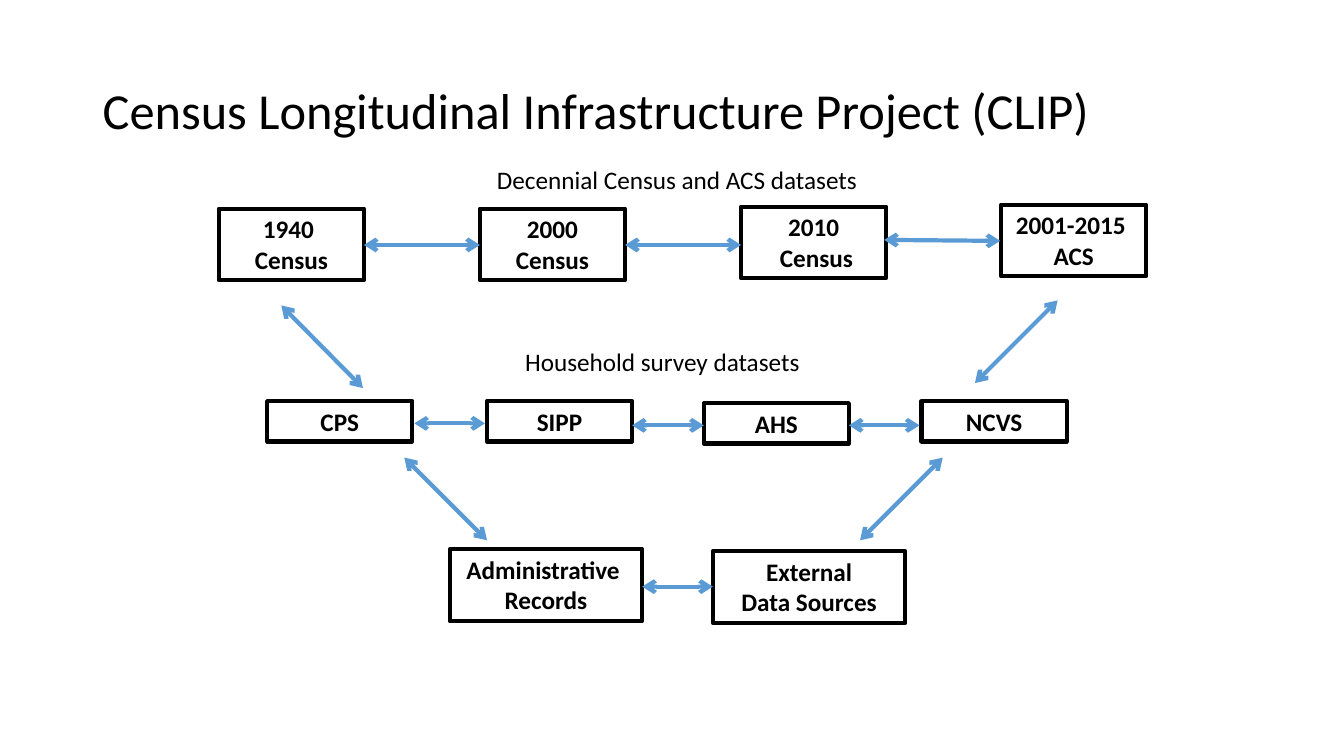
"""Build the Census Longitudinal Infrastructure Project slide."""
from dataclasses import dataclass

from lxml import etree
from pptx import Presentation
from pptx.dml.color import RGBColor
from pptx.enum.shapes import MSO_CONNECTOR, MSO_SHAPE
from pptx.enum.text import MSO_ANCHOR, PP_ALIGN
from pptx.oxml.ns import qn
from pptx.util import Inches, Pt

RECTANGLE = MSO_SHAPE.RECTANGLE
STRAIGHT = MSO_CONNECTOR.STRAIGHT
MIDDLE, TOP = MSO_ANCHOR.MIDDLE, MSO_ANCHOR.TOP
LEFT, CENTER = PP_ALIGN.LEFT, PP_ALIGN.CENTER
BLACK, WHITE, BLUE = "000000", "FFFFFF", "5B9BD5"
FONT = "Calibri"
LINE_WIDTH = Pt(3)


@dataclass(frozen=True)
class Dataset:
    label: str
    left: float
    top: float


@dataclass(frozen=True)
class Tier:
    width: float
    height: float
    datasets: tuple[Dataset, ...]


@dataclass(frozen=True)
class Caption:
    text: str
    left: float
    top: float
    width: float


@dataclass(frozen=True)
class Link:
    x1: float
    y1: float
    x2: float
    y2: float


TIERS = (
    Tier(1.44, 0.71, (
        Dataset("1940 \nCensus", 2.17, 2.07),
        Dataset("2000\nCensus", 4.76, 2.07),
        Dataset("2010\n Census", 7.35, 2.05),
        Dataset("2001-2015 \nACS", 9.93, 2.03),
    )),
    Tier(1.44, 0.4, (
        Dataset("CPS", 2.65, 3.98),
        Dataset("SIPP", 4.83, 3.98),
        Dataset("AHS", 6.98, 4),
        Dataset("NCVS", 9.14, 3.98),
    )),
    Tier(1.91, 0.71, (
        Dataset("Administrative \nRecords", 4.46, 5.45),
        Dataset("External\nData Sources", 7.07, 5.47),
    )),
)
CAPTIONS = (
    Caption("Decennial Census and ACS datasets", 4.83, 1.58, 3.82),
    Caption("Household survey datasets", 5.11, 3.39, 2.95),
)
LINKS = (
    Link(3.61, 2.43, 4.76, 2.43),
    Link(6.2, 2.43, 7.35, 2.43),
    Link(8.77, 2.38, 9.92, 2.39),
    Link(4.11, 4.2, 4.81, 4.2),
    Link(6.27, 4.22, 6.98, 4.22),
    Link(8.42, 4.22, 9.12, 4.22),
    Link(6.37, 5.82, 7.07, 5.82),
    Link(2.79, 3.03, 3.6, 3.85),
    Link(10.49, 2.98, 9.67, 3.8),
    Link(4.01, 4.54, 4.83, 5.36),
    Link(9.35, 4.54, 8.53, 5.36),
)


def color(value: str) -> RGBColor:
    return RGBColor.from_string(value)


def write(shape, text: str, *, size: float = 18, bold: bool = False,
          align: PP_ALIGN = LEFT, anchor: MSO_ANCHOR = TOP,
          wrap: bool = True, spacing: float = 1.0) -> None:
    frame = shape.text_frame
    frame.word_wrap = wrap
    frame.vertical_anchor = anchor
    frame.text = text
    for paragraph in frame.paragraphs:
        paragraph.alignment = align
        paragraph.line_spacing = spacing
        font = paragraph.runs[0].font
        font.name, font.size, font.bold = FONT, Pt(size), bold
        font.color.rgb = color(BLACK)


def draw_dataset(slide, dataset: Dataset, width: float, height: float) -> None:
    box = slide.shapes.add_shape(RECTANGLE, Inches(dataset.left), Inches(dataset.top),
                                 Inches(width), Inches(height))
    box.shadow.inherit = False
    box.fill.solid()
    box.fill.fore_color.rgb = color(WHITE)
    box.line.color.rgb = color(BLACK)
    box.line.width = LINE_WIDTH
    write(box, dataset.label, bold=True, align=CENTER)


def draw_caption(slide, caption: Caption) -> None:
    box = slide.shapes.add_textbox(Inches(caption.left), Inches(caption.top),
                                   Inches(caption.width), Inches(0.4))
    write(box, caption.text, wrap=False)


def draw_link(slide, link: Link) -> None:
    arrow = slide.shapes.add_connector(STRAIGHT, Inches(link.x1), Inches(link.y1),
                                       Inches(link.x2), Inches(link.y2))
    arrow.line.color.rgb = color(BLUE)
    arrow.line.width = LINE_WIDTH
    outline = arrow.line._get_or_add_ln()
    for end in ("a:headEnd", "a:tailEnd"):
        etree.SubElement(outline, qn(end), type="arrow")
    etree.SubElement(arrow._element.spPr, qn("a:effectLst"))


def main() -> None:
    presentation = Presentation()
    presentation.slide_width = Inches(13.33)
    presentation.slide_height = Inches(7.5)
    slide = presentation.slides.add_slide(presentation.slide_layouts[6])

    title = slide.shapes.add_textbox(Inches(0.92), Inches(0.4), Inches(11.5), Inches(1.45))
    write(title, "Census Longitudinal Infrastructure Project (CLIP)",
          size=36, anchor=MIDDLE, spacing=0.9)
    for tier in TIERS:
        for dataset in tier.datasets:
            draw_dataset(slide, dataset, tier.width, tier.height)
    for caption in CAPTIONS:
        draw_caption(slide, caption)
    for link in LINKS:
        draw_link(slide, link)

    presentation.save("out.pptx")


if __name__ == "__main__":
    main()
